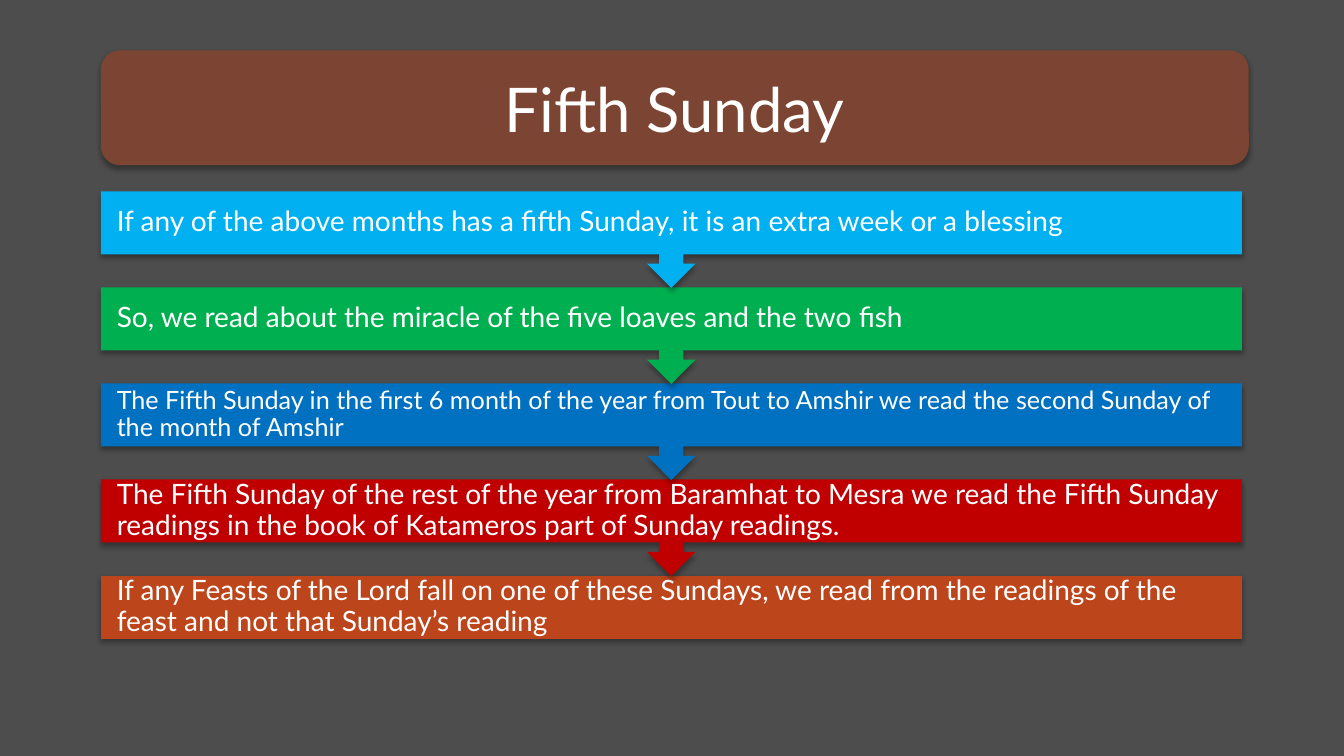
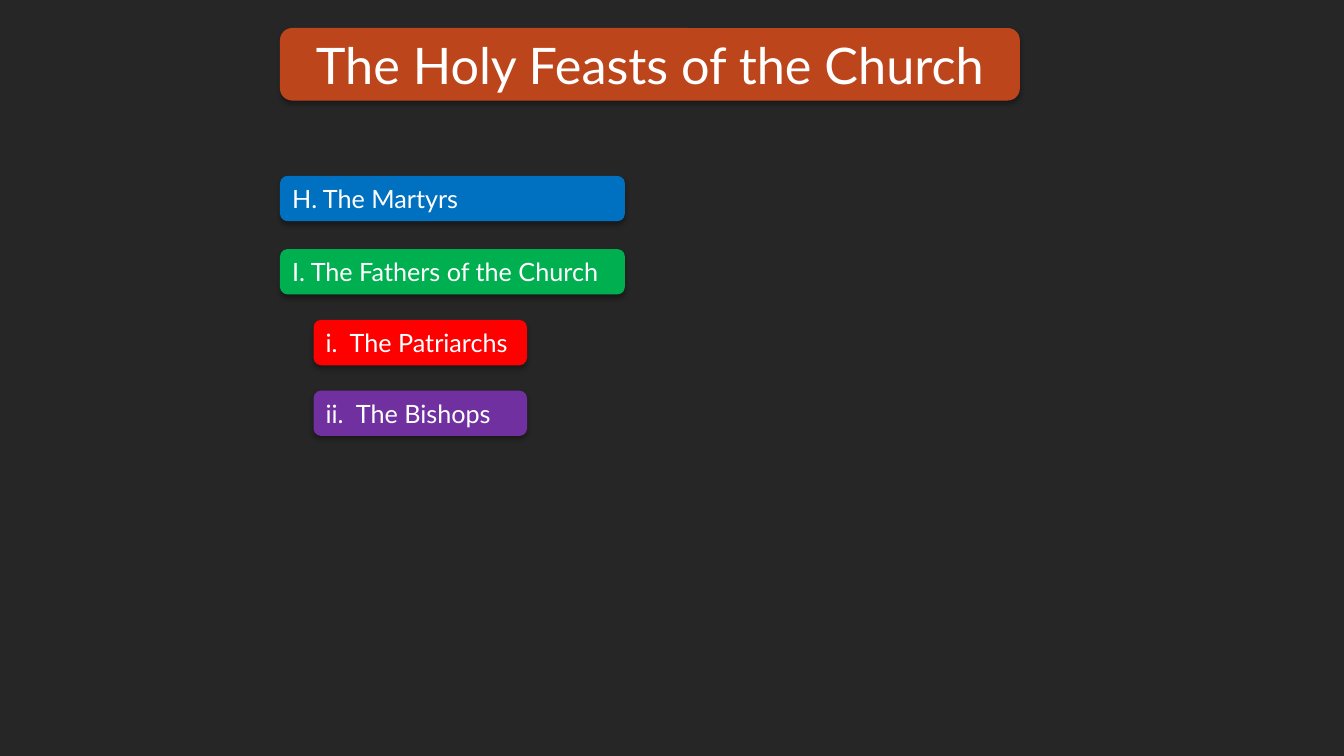
from typing import NamedTuple

from lxml.etree import SubElement
from pptx import Presentation
from pptx.dml.color import RGBColor
from pptx.enum.shapes import MSO_SHAPE
from pptx.enum.text import MSO_ANCHOR, MSO_AUTO_SIZE, PP_ALIGN
from pptx.oxml.ns import qn
from pptx.util import Pt

FONT = "Lato"
COLORS = {
    "grey": "4D4D4D", "charcoal": "262626", "white": "FFFFFF",
    "brown": "7C4432", "rust": "BC451B", "sky": "00B0F0", "green": "00B050",
    "blue": "0070C0", "crimson": "C00000", "red": "FF0000", "purple": "7030A0",
}

# Geometry of the step chain, in points
STEP_LEFT, STEP_TOP, STEP_WIDTH = 72, 136.7, 815
STEP_PITCH, BAR_HEIGHT = 68.6, 45
STEM_HALF, HEAD_HALF, HEAD_TOP, ARROW_TIP = 8.7, 17.3, 51.7, 69
STEP_INSET = 11.4

LABEL_HEIGHT = 32.4


class Area(NamedTuple):
    left: float
    top: float
    width: float
    height: float


class Step(NamedTuple):
    text: str
    color: str
    size: float = 20


class Label(NamedTuple):
    text: str
    color: str
    left: float
    top: float
    width: float
    tab: float = 0


STEPS = [
    Step("If any of the above months has a fifth Sunday, it is an extra week or a blessing", "sky"),
    Step("So, we read about the miracle of the five loaves and the two fish", "green"),
    Step("The Fifth Sunday in the first 6 month of the year from Tout to Amshir "
         "we read the second Sunday of the month of Amshir", "blue", 18),
    Step("The Fifth Sunday of the rest of the year from Baramhat to Mesra we read the "
         "Fifth Sunday readings in the book of Katameros part of Sunday readings.", "crimson"),
    Step("If any Feasts of the Lord fall on one of these Sundays, we read from the "
         "readings of the feast and not that Sunday’s reading", "rust"),
]

LABELS = [
    Label("H. The Martyrs", "blue", 200, 125.6, 246.4),
    Label("I. The Fathers of the Church", "green", 200, 177.9, 246.4),
    Label("i.\tThe Patriarchs", "red", 224, 228.5, 152.5, tab=17.2),
    Label("ii.\tThe Bishops", "purple", 224, 279, 152.5, tab=21.6),
]


def rgb(name: str) -> RGBColor:
    return RGBColor.from_string(COLORS[name])


def write(shape, text: str, *, size: float, align=PP_ALIGN.LEFT,
          line_spacing: float = 1.0, tab: float = 0) -> None:
    """Fill a shape with one white paragraph, anchored in the middle."""
    frame = shape.text_frame
    frame.word_wrap = True
    frame.auto_size = MSO_AUTO_SIZE.NONE
    frame.vertical_anchor = MSO_ANCHOR.MIDDLE
    para = frame.paragraphs[0]
    para.alignment = align
    para.line_spacing = line_spacing
    if tab:
        stops = SubElement(para._p.get_or_add_pPr(), qn("a:tabLst"))
        SubElement(stops, qn("a:tab"), pos=str(Pt(tab)), algn="l")
    span = para.add_run()
    span.text = text
    span.font.name = FONT
    span.font.size = Pt(size)
    span.font.color.rgb = rgb("white")


def paint(shape, color: str) -> None:
    """Give a shape a plain fill, no outline and the soft shadow."""
    shape.fill.solid()
    shape.fill.fore_color.rgb = rgb(color)
    shape.line.fill.background()
    shape.shadow.inherit = False
    effects = shape.element.spPr.find(qn("a:effectLst"))
    shadow = SubElement(effects, qn("a:outerShdw"), blurRad=str(Pt(3.5)),
                        dist=str(Pt(2.2)), dir="5400000", algn="t", rotWithShape="0")
    shade = SubElement(shadow, qn("a:srgbClr"), val="000000")
    SubElement(shade, qn("a:alpha"), val="32000")


def add_band(page, area: Area, color: str):
    band = page.shapes.add_shape(MSO_SHAPE.ROUNDED_RECTANGLE, *map(Pt, area))
    paint(band, color)
    return band


def add_page(deck, background: str):
    page = deck.slides.add_slide(deck.slide_layouts.get_by_name("Title Only"))
    page.background.fill.solid()
    page.background.fill.fore_color.rgb = rgb(background)
    return page


def add_title(page, text: str, area: Area, color: str, size: float) -> None:
    """Place the title placeholder in front of its rounded band."""
    add_band(page, area, color)
    title = page.shapes.title
    title.left, title.top, title.width, title.height = map(Pt, area)
    write(title, text, size=size, align=PP_ALIGN.CENTER)
    title.element.getparent().append(title.element)


def add_step(page, step: Step, top: float, has_arrow: bool) -> None:
    """Draw a bar, with a down arrow joined to it when another step follows."""
    right, center = STEP_LEFT + STEP_WIDTH, STEP_LEFT + STEP_WIDTH / 2
    bottom, shoulder = top + BAR_HEIGHT, top + HEAD_TOP
    arrow = [
        (center + STEM_HALF, bottom), (center + STEM_HALF, shoulder),
        (center + HEAD_HALF, shoulder), (center, top + ARROW_TIP),
        (center - HEAD_HALF, shoulder), (center - STEM_HALF, shoulder),
        (center - STEM_HALF, bottom),
    ] if has_arrow else []
    outline = [(right, top), (right, bottom), *arrow, (STEP_LEFT, bottom)]
    builder = page.shapes.build_freeform(Pt(STEP_LEFT), Pt(top))
    builder.add_line_segments([(Pt(x), Pt(y)) for x, y in outline], close=True)
    box = builder.convert_to_shape()
    paint(box, step.color)
    write(box, step.text, size=step.size, line_spacing=0.9)
    frame = box.text_frame
    frame.margin_left = frame.margin_right = frame.margin_top = Pt(STEP_INSET)
    arrow_height = ARROW_TIP - BAR_HEIGHT if has_arrow else 0
    frame.margin_bottom = Pt(STEP_INSET + arrow_height)


def build_fifth_sunday(deck) -> None:
    page = add_page(deck, "grey")
    # Last step first, so that each arrow lies over the next bar
    last = len(STEPS) - 1
    for index in range(last, -1, -1):
        add_step(page, STEPS[index], STEP_TOP + index * STEP_PITCH, index < last)
    add_title(page, "Fifth Sunday", Area(72, 36, 820, 82), "brown", 44)


def build_holy_feasts(deck) -> None:
    page = add_page(deck, "charcoal")
    add_title(page, "The Holy Feasts of the Church", Area(200, 20, 528.5, 51.8), "rust", 36)
    for label in LABELS:
        area = Area(label.left, label.top, label.width, LABEL_HEIGHT)
        band = add_band(page, area, label.color)
        write(band, label.text, size=18, tab=label.tab)


def main() -> None:
    deck = Presentation()
    deck.slide_width, deck.slide_height = Pt(960), Pt(540)
    build_fifth_sunday(deck)
    build_holy_feasts(deck)
    deck.save("out.pptx")


if __name__ == "__main__":
    main()
